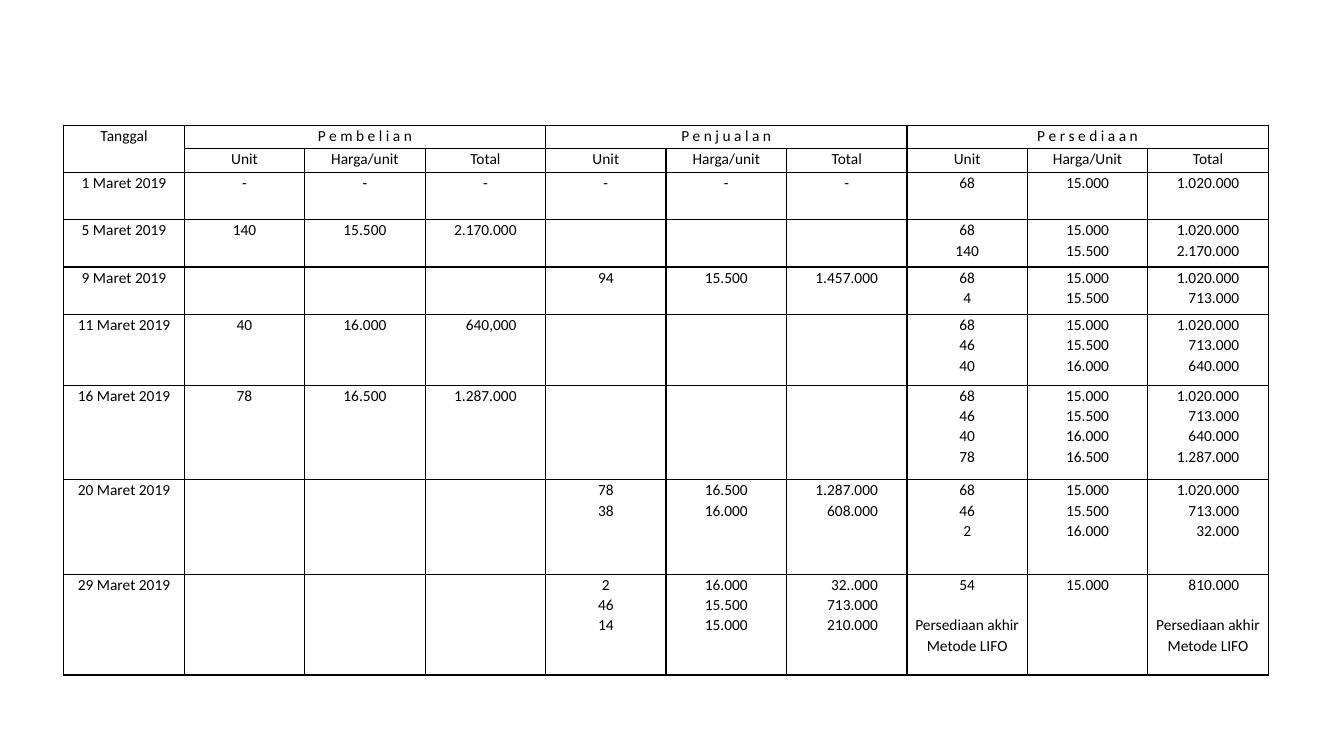
from lxml.etree import SubElement
from pptx import Presentation
from pptx.dml.color import RGBColor
from pptx.enum.text import PP_ALIGN as Align
from pptx.oxml.ns import qn
from pptx.util import Pt

BLACK = RGBColor(0x00, 0x00, 0x00)
FONT_SIZE = 11
LINE_HEIGHT = 14.4
DIGIT_WIDTH, DOT_WIDTH = 5.57, 2.78
WIDEST_TOTAL = 7 * DIGIT_WIDTH + 2 * DOT_WIDTH
TOTAL_COLUMNS = (3, 6, 9)

GROUPS = ["P e m b e l i a n", "P e n j u a l a n", "P e r s e d i a a n"]
HEADINGS = ["Unit", "Harga/unit", "Total"] * 2 + ["Unit", "Harga/Unit", "Total"]
ROW_HEIGHTS = [16.9, 16.9, 33.8, 33.8, 33.8, 50.6, 67.5, 67.5, 72]

# Each entry: date, then lines of (unit, price, total) by group
EMPTY = [(), (), ()]
ENTRIES = [
    ("1 Maret 2019", [["-"]] * 3, [["-"]] * 3,
     [["68"], ["15.000"], ["1.020.000"]]),
    ("5 Maret 2019", [["140"], ["15.500"], ["2.170.000"]], EMPTY,
     [["68", "140"], ["15.000", "15.500"], ["1.020.000", "2.170.000"]]),
    ("9 Maret 2019", EMPTY, [["94"], ["15.500"], ["1.457.000"]],
     [["68", "4"], ["15.000", "15.500"], ["1.020.000", "713.000"]]),
    ("11 Maret 2019", [["40"], ["16.000"], ["640,000"]], EMPTY,
     [["68", "46", "40"], ["15.000", "15.500", "16.000"],
      ["1.020.000", "713.000", "640.000"]]),
    ("16 Maret 2019", [["78"], ["16.500"], ["1.287.000"]], EMPTY,
     [["68", "46", "40", "78"], ["15.000", "15.500", "16.000", "16.500"],
      ["1.020.000", "713.000", "640.000", "1.287.000"]]),
    ("20 Maret 2019", EMPTY,
     [["78", "38"], ["16.500", "16.000"], ["1.287.000", "608.000"]],
     [["68", "46", "2"], ["15.000", "15.500", "16.000"],
      ["1.020.000", "713.000", "32.000"]]),
    ("29 Maret 2019", EMPTY,
     [["2", "46", "14"], ["16.000", "15.500", "15.000"],
      ["32..000", "713.000", "210.000"]],
     [["54", "Persediaan akhir", "Metode LIFO"], ["15.000"],
      ["810.000", "Persediaan akhir Metode LIFO"]]),
]


def add_borders(cell):
    properties = cell._tc.get_or_add_tcPr()
    for position, side in enumerate(("a:lnL", "a:lnR", "a:lnT", "a:lnB")):
        line = SubElement(properties, qn(side), w=str(Pt(1)))
        fill = SubElement(line, qn("a:solidFill"))
        SubElement(fill, qn("a:srgbClr"), val=str(BLACK))
        properties.remove(line)
        properties.insert(position, line)


def indent_total(paragraph, text):
    """Indent a centred amount so that it ends level with the widest total."""
    digits = sum(character.isdigit() for character in text)
    width = digits * DIGIT_WIDTH + (len(text) - digits) * DOT_WIDTH
    indent = Pt(round(WIDEST_TOTAL - width, 2))
    paragraph._p.get_or_add_pPr().set("marL", str(indent))


def fill_cell(cell, lines, is_total=False):
    cell.margin_left = cell.margin_right = Pt(5)
    cell.margin_top = cell.margin_bottom = Pt(0)
    cell.fill.background()
    add_borders(cell)
    cell.text_frame.text = "\n".join(lines)
    for paragraph, text in zip(cell.text_frame.paragraphs, lines or [""]):
        paragraph.alignment = Align.CENTER
        paragraph.line_spacing = 1.07
        paragraph.font.size = Pt(FONT_SIZE)
        paragraph.font.name = "Calibri"
        paragraph.font.color.rgb = BLACK
        if text.startswith("Persediaan"):
            paragraph.space_before = Pt(LINE_HEIGHT)
        elif is_total and text[:1].isdigit():
            indent_total(paragraph, text)


def add_stock_card(slide, left, top, width):
    columns = len(HEADINGS) + 1
    frame = slide.shapes.add_table(len(ROW_HEIGHTS), columns, Pt(left), Pt(top),
                                   Pt(width), Pt(sum(ROW_HEIGHTS)))
    table = frame.table
    table.first_row = table.horz_banding = False
    for column in table.columns:
        column.width = Pt(width / columns)
    for row, height in zip(table.rows, ROW_HEIGHTS):
        row.height = Pt(height)

    group_cells = [cell for group in GROUPS for cell in ([group], [], [])]
    rows = [[["Tanggal"]] + group_cells,
            [[]] + [[heading] for heading in HEADINGS]]
    rows += [[[date]] + buying + selling + stock
             for date, buying, selling, stock in ENTRIES]
    for row_index, row in enumerate(rows):
        for column_index, lines in enumerate(row):
            fill_cell(table.cell(row_index, column_index), lines,
                      column_index in TOTAL_COLUMNS)

    table.cell(0, 0).merge(table.cell(1, 0))
    for first in range(1, columns, 3):
        table.cell(0, first).merge(table.cell(0, first + 2))


def main():
    presentation = Presentation()
    presentation.slide_width, presentation.slide_height = Pt(960), Pt(540)
    slide = presentation.slides.add_slide(presentation.slide_layouts[6])
    add_stock_card(slide, left=45.6, top=89.4, width=860.4)
    presentation.save("out.pptx")


if __name__ == "__main__":
    main()
